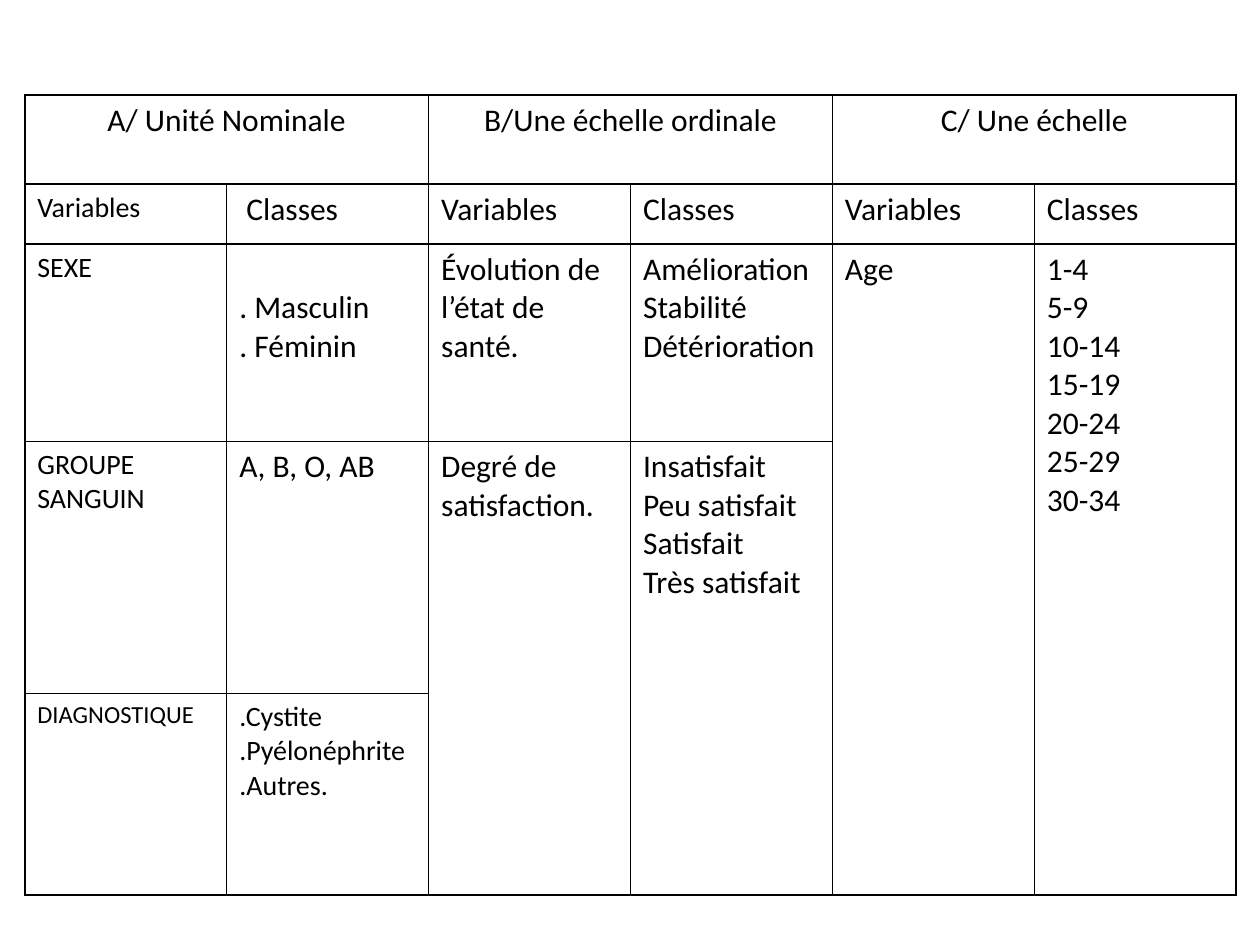
"""Build a slide with a table of measurement scales, their variables and classes."""
from lxml import etree
from pptx import Presentation
from pptx.dml.color import RGBColor
from pptx.enum.text import PP_ALIGN
from pptx.oxml.ns import qn
from pptx.util import Cm, Pt

LEFT, CENTER = PP_ALIGN.LEFT, PP_ALIGN.CENTER
BLACK = RGBColor(0, 0, 0)
FONT = "Calibri"
BORDER = Pt(1)

COL_WIDTH = 4.07
ROW_HEIGHTS = [1.79, 1.21, 3.98, 5.08, 4.06]
HEADINGS = ["A/ Unité Nominale", "B/Une échelle ordinale", "C/ Une échelle"]
ENTRIES = [
    (1, 0, ["Variables"], {"size": 16}),
    (1, 1, [" Classes"], {}),
    (1, 2, ["Variables"], {}),
    (1, 3, ["Classes"], {}),
    (1, 4, ["Variables"], {}),
    (1, 5, ["Classes"], {}),
    (2, 0, ["SEXE"], {"size": 16}),
    (2, 1, [". Masculin", ". Féminin"], {"top": 0.9}),
    (2, 2, ["Évolution de l’état de santé."], {}),
    (2, 3, ["Amélioration", "Stabilité", "Détérioration"], {}),
    (2, 4, ["Age"], {}),
    (2, 5, ["1-4", "5-9", "10-14", "15-19", "20-24", "25-29", "30-34"], {}),
    (3, 0, ["GROUPE SANGUIN"], {"size": 16}),
    (3, 1, ["A, B, O, AB"], {}),
    (3, 2, ["Degré de satisfaction."], {}),
    (3, 3, ["Insatisfait", "Peu satisfait", "Satisfait", "Très satisfait"], {}),
    (4, 0, ["DIAGNOSTIQUE"], {"size": 14}),
    (4, 1, [".Cystite", ".Pyélonéphrite", ".Autres."], {"size": 16}),
]
MERGES = [((0, c), (0, c + 1)) for c in (0, 2, 4)]
MERGES += [((r, c), (4, c)) for r, c in ((3, 2), (3, 3), (2, 4), (2, 5))]


def write(cell, lines, size=18, align=LEFT, top=0.13):
    cell.margin_top = Cm(top)
    tf = cell.text_frame
    for i, line in enumerate(lines):
        p = tf.add_paragraph() if i else tf.paragraphs[0]
        p.alignment = align
        r = p.add_run()
        r.text = line
        r.font.name = FONT
        r.font.size = Pt(size)
        r.font.bold = False
        r.font.color.rgb = BLACK


def outline(cell):
    cell.fill.background()
    tc_pr = cell._tc.get_or_add_tcPr()
    for i, side in enumerate(("a:lnL", "a:lnR", "a:lnT", "a:lnB")):
        ln = etree.Element(qn(side), w=str(BORDER))
        fill = etree.SubElement(ln, qn("a:solidFill"))
        etree.SubElement(fill, qn("a:srgbClr"), val=str(BLACK))
        tc_pr.insert(i, ln)


def main():
    prs = Presentation()
    prs.slide_width, prs.slide_height = Cm(25.4), Cm(19.05)
    s = prs.slides.add_slide(prs.slide_layouts[6])
    cols = 2 * len(HEADINGS)
    table = s.shapes.add_table(
        len(ROW_HEIGHTS), cols, Cm(0.5), Cm(1.92),
        Cm(COL_WIDTH * cols), Cm(sum(ROW_HEIGHTS)),
    ).table
    table.first_row = table.horz_banding = False
    for col in table.columns:
        col.width = Cm(COL_WIDTH)
    for row, height in zip(table.rows, ROW_HEIGHTS):
        row.height = Cm(height)
    for cell in table.iter_cells():
        outline(cell)
    for start, end in MERGES:
        table.cell(*start).merge(table.cell(*end))
    for i, heading in enumerate(HEADINGS):
        write(table.cell(0, 2 * i), [heading], align=CENTER)
    for row, col, lines, style in ENTRIES:
        write(table.cell(row, col), lines, **style)
    prs.save("out.pptx")


if __name__ == "__main__":
    main()
